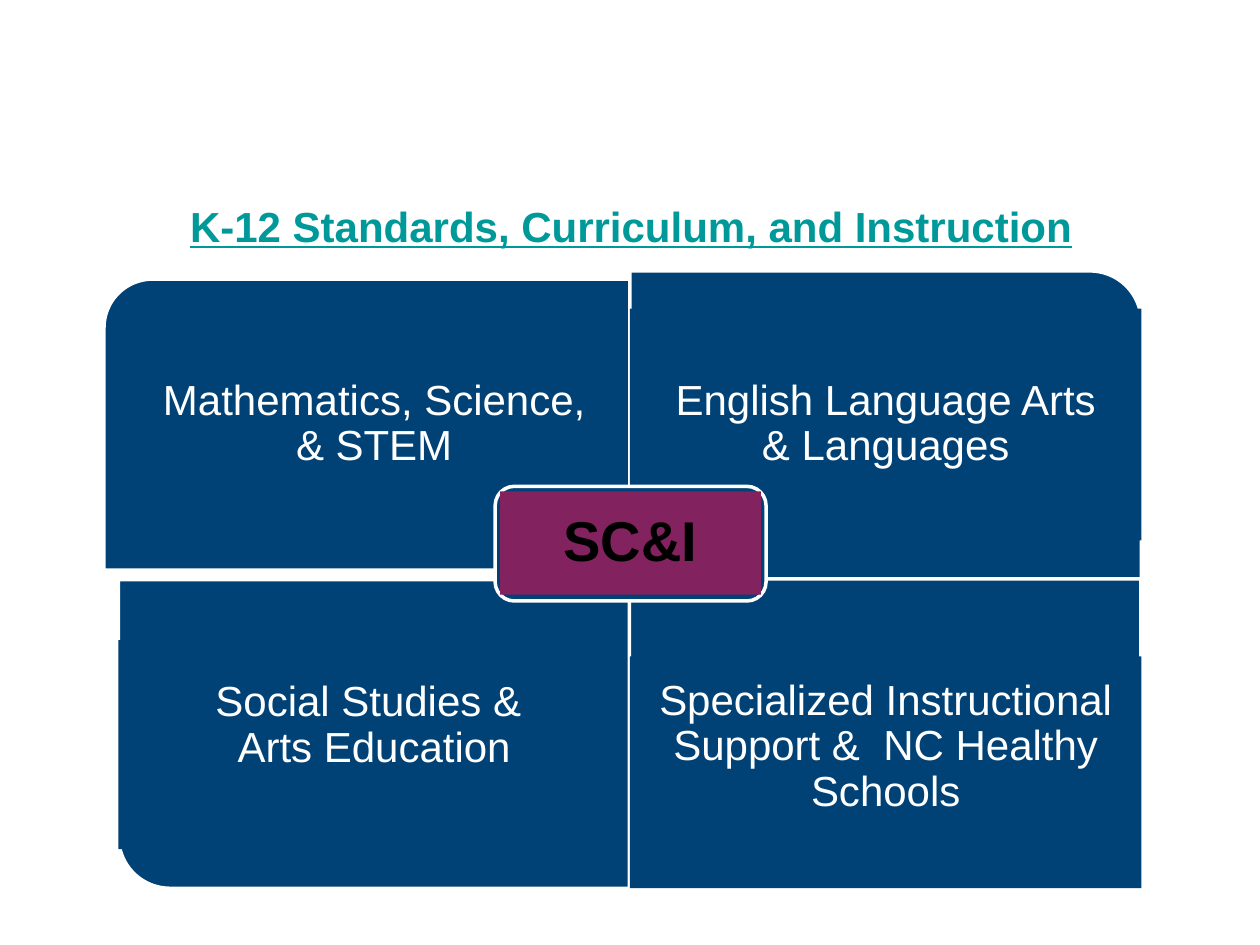
from dataclasses import dataclass

import pptx
import pptx.dml.color
import pptx.enum.shapes
import pptx.enum.text
import pptx.util

Inches = pptx.util.Inches
Pt = pptx.util.Pt
RGBColor = pptx.dml.color.RGBColor
Shape = pptx.enum.shapes.MSO_SHAPE
Align = pptx.enum.text.PP_ALIGN
Anchor = pptx.enum.text.MSO_ANCHOR

NAVY = RGBColor(0x00, 0x42, 0x76)
PLUM = RGBColor(0x82, 0x22, 0x5E)
TEAL = RGBColor(0x00, 0x99, 0x99)
WHITE = RGBColor(0xFF, 0xFF, 0xFF)
BLACK = RGBColor(0x00, 0x00, 0x00)
CORNER = 0.167


@dataclass
class Area:
    left: float
    top: float
    width: float
    height: float


@dataclass
class Quadrant:
    panel: Area
    rotation: int
    label: Area
    lines: list[str]
    top_inset: float = 0.22
    bottom_inset: float = 0.22


QUADRANTS = [
    Quadrant(Area(1.76, 1.28, 2.31, 4.18), 270, Area(0.94, 2.45, 4.06, 1.84),
             ["Mathematics, Science, & STEM"]),
    Quadrant(Area(5, 2.15, 4.06, 2.45), 0, Area(5, 2.45, 4.06, 1.84),
             ["English Language Arts & Languages"]),
    Quadrant(Area(0.94, 4.6, 4.06, 2.45), 180, Area(0.94, 5.08, 4.06, 1.66),
             ["Social Studies & ", "Arts Education"], bottom_inset=0.52),
    Quadrant(Area(5.8, 3.79, 2.45, 4.06), 90, Area(5, 5.21, 4.06, 1.84),
             ["Specialized Instructional Support &  NC Healthy Schools"],
             top_inset=0.1, bottom_inset=0.5),
]


def place(area: Area) -> list[pptx.util.Length]:
    return [Inches(value) for value in (area.left, area.top, area.width, area.height)]


def add_panel(page, kind, area: Area, rotation: int = 0):
    panel = page.shapes.add_shape(kind, *place(area))
    panel.shadow.inherit = False
    panel.adjustments[0] = CORNER
    panel.rotation = rotation
    panel.fill.solid()
    panel.fill.fore_color.rgb = NAVY
    panel.line.color.rgb = WHITE
    panel.line.width = Pt(2)


def add_label(page, area: Area, fill: RGBColor):
    label = page.shapes.add_shape(Shape.RECTANGLE, *place(area))
    label.shadow.inherit = False
    label.fill.solid()
    label.fill.fore_color.rgb = fill
    label.line.fill.background()
    return label


def write(box, lines: list[str], *, color: RGBColor, size: int = 24,
          bold: bool = False, underline: bool = False, align=Align.CENTER,
          anchor=Anchor.MIDDLE, spacing: float = 0.9, side: float = 0.22,
          top: float = 0.22, bottom: float = 0.22):
    frame = box.text_frame
    frame.word_wrap = True
    frame.vertical_anchor = anchor
    frame.margin_left = frame.margin_right = Inches(side)
    frame.margin_top = Inches(top)
    frame.margin_bottom = Inches(bottom)
    for index, line in enumerate(lines):
        para = frame.add_paragraph() if index else frame.paragraphs[0]
        para.alignment = align
        para.line_spacing = spacing
        span = para.add_run()
        span.text = line
        span.font.name = "Arial"
        span.font.size = Pt(size)
        span.font.bold = bold
        span.font.underline = underline
        span.font.color.rgb = color


def main():
    deck = pptx.Presentation()
    deck.slide_width = Inches(10)
    deck.slide_height = Inches(7.5)
    page = deck.slides.add_slide(deck.slide_layouts[6])

    for quadrant in QUADRANTS:
        add_panel(page, Shape.ROUND_1_RECTANGLE, quadrant.panel, quadrant.rotation)
        label = add_label(page, quadrant.label, NAVY)
        write(label, quadrant.lines, color=WHITE,
              top=quadrant.top_inset, bottom=quadrant.bottom_inset)

    add_panel(page, Shape.ROUNDED_RECTANGLE, Area(3.93, 3.86, 2.15, 0.91))
    center = add_label(page, Area(3.97, 3.9, 2.07, 0.82), PLUM)
    write(center, ["SC&I"], color=BLACK, size=32, bold=True,
          side=0.13, top=0.13, bottom=0.13)

    title = page.shapes.add_textbox(*place(Area(1.41, 1.49, 8.12, 0.55)))
    write(title, ["K-12 Standards, Curriculum, and Instruction"], color=TEAL,
          bold=True, underline=True, align=Align.LEFT, anchor=Anchor.TOP,
          spacing=1.0, side=0.1, top=0.1, bottom=0.1)

    deck.save("out.pptx")


if __name__ == "__main__":
    main()
